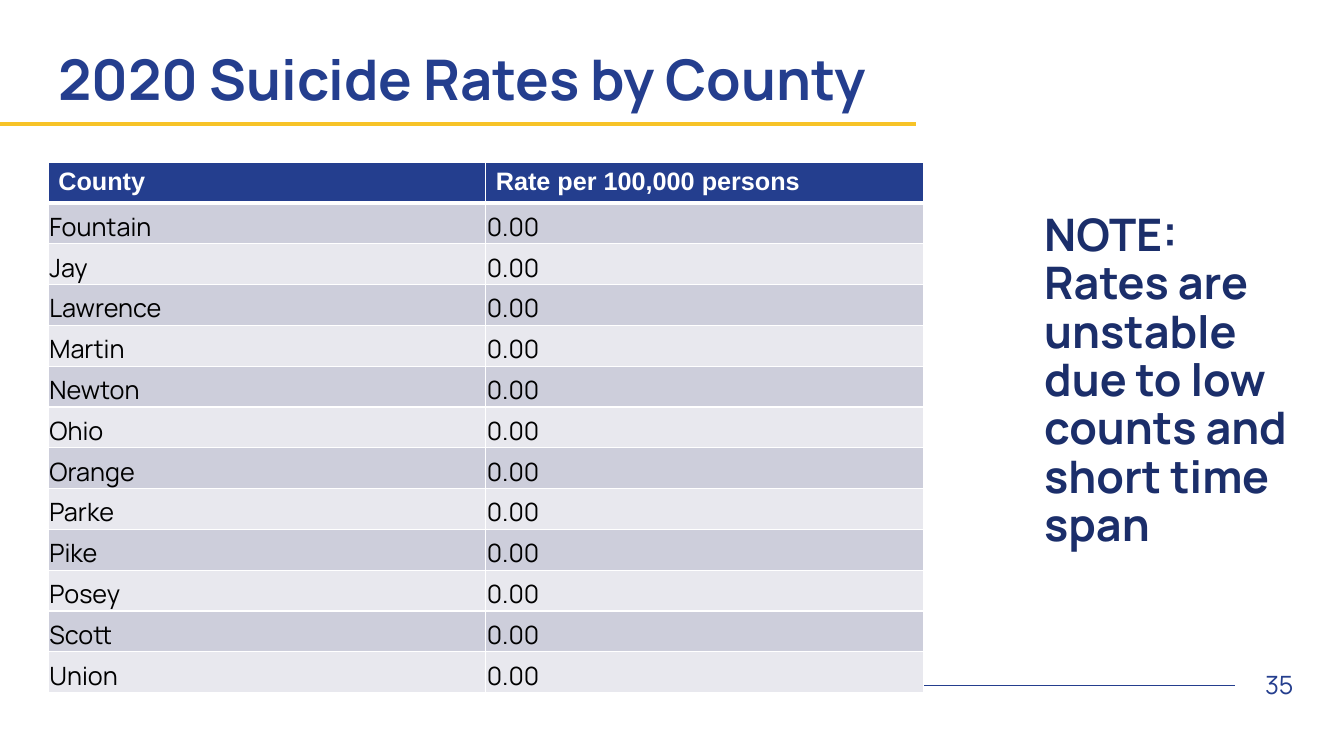
from dataclasses import dataclass

from lxml import etree
from pptx import Presentation
from pptx import util as u
from pptx.dml.color import RGBColor
from pptx.enum import shapes, text
from pptx.oxml import ns

WIDTH, HEIGHT = u.Inches(13.333), u.Inches(7.5)
NAVY, DEEP_NAVY, GOLD = "243E8E", "1B2E6A", "F7C327"
WHITE, BLACK = "FFFFFF", "000000"
BANDS = ("CDCEDB", "E8E8EE")
COUNTIES = (
    "Fountain", "Jay", "Lawrence", "Martin", "Newton", "Ohio",
    "Orange", "Parke", "Pike", "Posey", "Scott", "Union",
)
HEADINGS = ("County", "Rate per 100,000 persons")


@dataclass(frozen=True)
class Style:
    size: int
    color: str
    bold: bool = False
    font: str = "Manrope"


@dataclass(frozen=True)
class Rule:
    start: float
    end: float
    top: float
    color: str
    weight: int


@dataclass(frozen=True)
class Label:
    left: float
    top: float
    width: float
    height: float
    words: str
    style: Style
    align: text.PP_ALIGN = text.PP_ALIGN.LEFT
    spacing: float = 1.0


RULES = (
    Rule(17.25, 91.88, 90.67, NAVY, 1),
    Rule(0, 68.18, 16.4, GOLD, 3),
)
LABELS = (
    Label(3.6, 5.33, 89.55, 11.07, "2020 Suicide Rates by County",
          Style(40, NAVY, True), spacing=0.9),
    Label(91.88, 87.87, 5.1, 5.33, "35", Style(18, NAVY), text.PP_ALIGN.RIGHT),
    Label(76.95, 24.8, 21.08, 51.47,
          "NOTE: Rates are unstable due to low counts and short time span",
          Style(32, DEEP_NAVY, True), spacing=0.9),
)
TABLE_LEFT, TABLE_TOP, COLUMN_WIDTH, ROW_HEIGHT = 3.6, 21.47, 32.55, 5.4
HEADING_STYLE = Style(18, WHITE, True, "Arial")
ENTRY_STYLE = Style(18, BLACK)


def across(percent: float) -> u.Emu:
    return u.Emu(round(WIDTH * percent / 100))


def down(percent: float) -> u.Emu:
    return u.Emu(round(HEIGHT * percent / 100))


def paint(value: str) -> RGBColor:
    return RGBColor.from_string(value)


def add_span(para, words: str, style: Style) -> None:
    span = para.add_run()
    span.text = words
    span.font.name = style.font
    span.font.size = u.Pt(style.size)
    span.font.bold = style.bold
    span.font.color.rgb = paint(style.color)


def draw_rule(page, rule: Rule) -> None:
    line = page.shapes.add_connector(
        shapes.MSO_CONNECTOR.STRAIGHT,
        across(rule.start), down(rule.top), across(rule.end), down(rule.top))
    line.line.color.rgb = paint(rule.color)
    line.line.width = u.Pt(rule.weight)
    etree.SubElement(line._element.spPr, ns.qn("a:effectLst"))


def draw_label(page, label: Label) -> None:
    box = page.shapes.add_textbox(
        across(label.left), down(label.top), across(label.width), down(label.height))
    frame = box.text_frame
    frame.word_wrap = True
    frame.vertical_anchor = text.MSO_ANCHOR.MIDDLE
    para = frame.paragraphs[0]
    para.alignment = label.align
    para.line_spacing = label.spacing
    add_span(para, label.words, label.style)


def add_border(cell, side: str, weight: int) -> None:
    properties = cell._tc.get_or_add_tcPr()
    border = etree.SubElement(properties, ns.qn(f"a:ln{side}"), w=str(u.Pt(weight)))
    fill = etree.SubElement(border, ns.qn("a:solidFill"))
    etree.SubElement(fill, ns.qn("a:srgbClr"), val=WHITE)


def fill_cell(cell, words: str, row: int) -> None:
    heading = row == 0
    weights = {"L": 1, "R": 1, "T": 3 if row == 1 else 1, "B": 3 if heading else 1}
    for side, weight in weights.items():
        add_border(cell, side, weight)
    cell.fill.solid()
    cell.fill.fore_color.rgb = paint(NAVY if heading else BANDS[(row - 1) % 2])
    if not heading:
        cell.vertical_anchor = text.MSO_ANCHOR.BOTTOM
        cell.margin_left = cell.margin_right = cell.margin_top = u.Inches(0.01)
        cell.margin_bottom = 0
    add_span(cell.text_frame.paragraphs[0], words,
             HEADING_STYLE if heading else ENTRY_STYLE)


def draw_table(page) -> None:
    entries = [HEADINGS, *((county, "0.00") for county in COUNTIES)]
    table = page.shapes.add_table(
        len(entries), len(HEADINGS), across(TABLE_LEFT), down(TABLE_TOP),
        across(COLUMN_WIDTH * len(HEADINGS)), down(ROW_HEIGHT * len(entries))).table
    for column in table.columns:
        column.width = across(COLUMN_WIDTH)
    for row, entry in enumerate(entries):
        table.rows[row].height = down(ROW_HEIGHT)
        for column, words in enumerate(entry):
            fill_cell(table.cell(row, column), words, row)


def main() -> None:
    deck = Presentation()
    deck.slide_width, deck.slide_height = WIDTH, HEIGHT
    page = deck.slides.add_slide(deck.slide_layouts[6])
    for rule in RULES:
        draw_rule(page, rule)
    draw_table(page)
    for label in LABELS:
        draw_label(page, label)
    deck.save("out.pptx")


if __name__ == "__main__":
    main()
